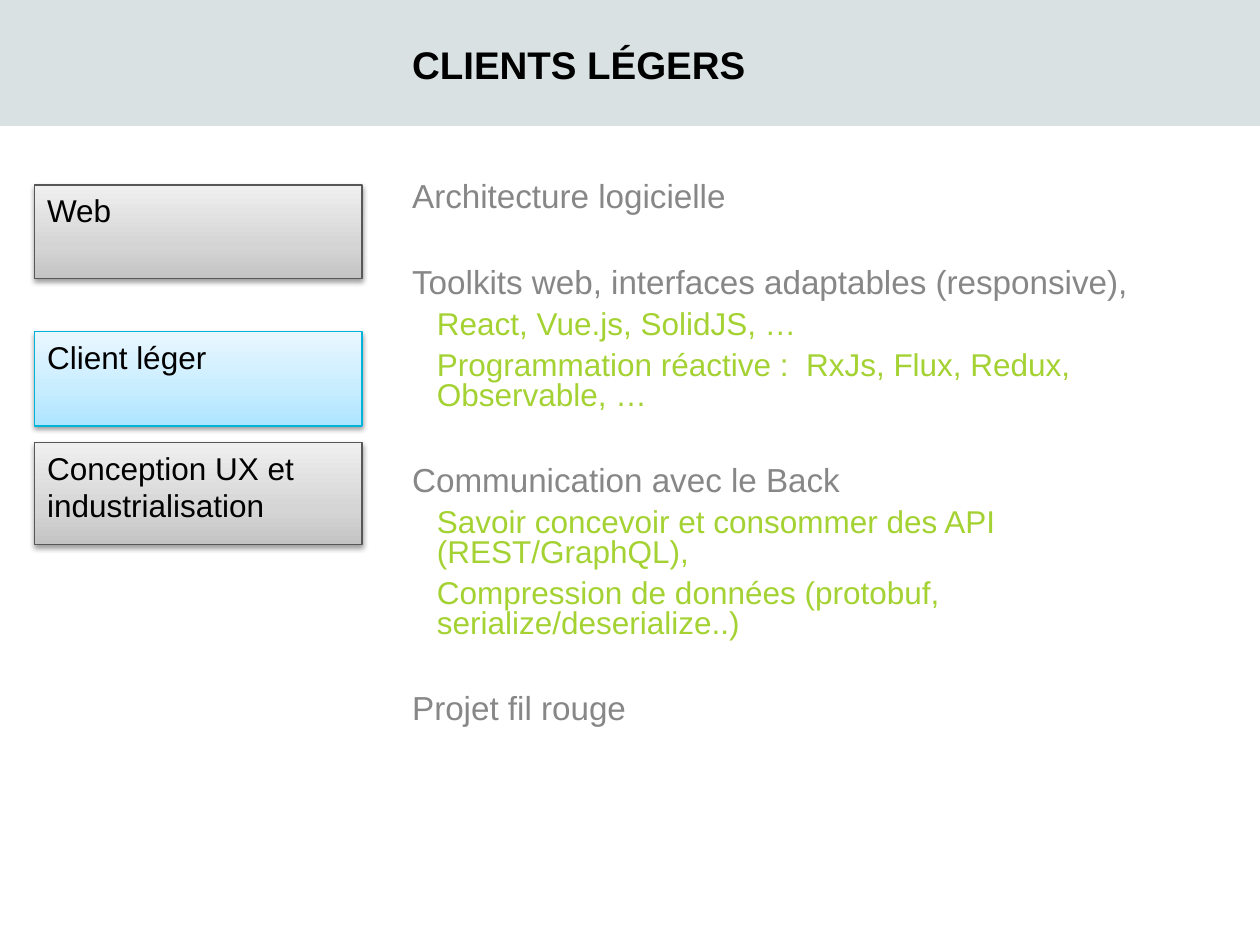
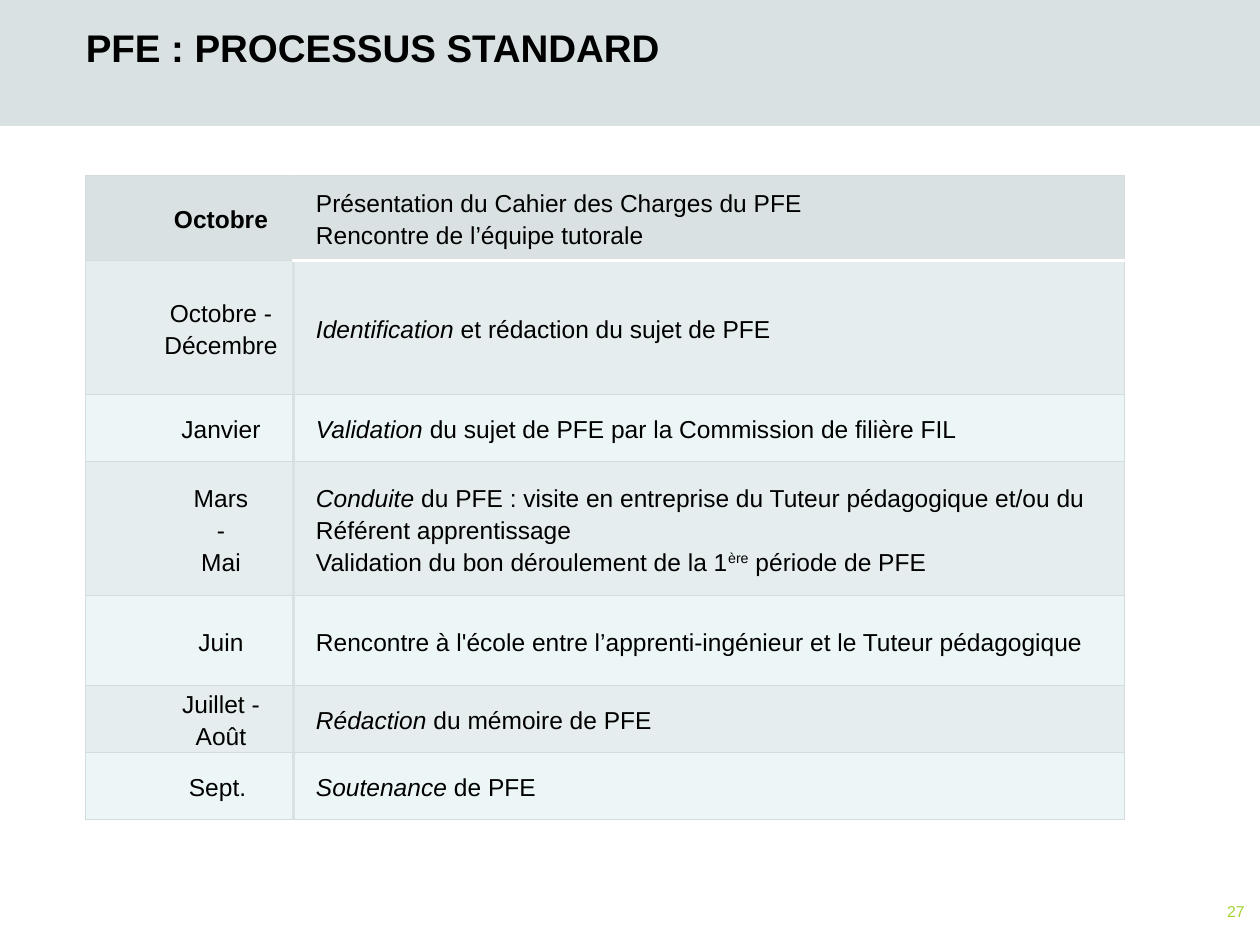
from copy import deepcopy

from lxml.etree import SubElement as Sub
from pptx import Presentation
from pptx.dml.color import RGBColor as Rgb
from pptx.enum.shapes import MSO_SHAPE as Kind
from pptx.enum.text import MSO_ANCHOR as Anchor, MSO_AUTO_SIZE as Auto, PP_ALIGN as Align
from pptx.oxml.ns import qn
from pptx.util import Cm, Pt

HUES = {
    "black": "000000", "white": "FFFFFF", "band": "D9E1E2",
    "gray": "878787", "lime": "A4D233", "rule": "D4DCDD",
    "odd": "E5EDEE", "even": "EDF6F7",
}
GRAY = {"stops": ("C4C4C4", "D5D5D5", "EFEFEF"), "edge": "575757"}
BLUE = {"stops": ("ADE5FF", "C5ECFF", "E9F7FF"), "edge": "00B4D9"}
FONT = "Arial"


def hue(name):
    return Rgb.from_string(HUES.get(name, name))


def put(para, text, size=18, color="black", bold=False, align=Align.LEFT,
        line=1.0, before=0, after=0, indent=0, level=0):
    props = para._p.get_or_add_pPr()
    props.set("marL", str(Cm(indent)))
    props.set("indent", "0")
    para.level = level
    para.alignment = align
    para.line_spacing = line
    para.space_before = Pt(before)
    para.space_after = Pt(after)
    for i, part in enumerate(text.split("*")):
        for j, piece in enumerate(part.split("^")):
            if not piece:
                continue
            run = para.add_run()
            run.text = piece
            font = run.font
            font.name, font.size = FONT, Pt(size)
            font.bold, font.italic = bold, i % 2 == 1
            font.color.rgb = hue(color)
            if j % 2:
                run._r.get_or_add_rPr().set("baseline", "30000")


def fill_text(frame, lines, **style):
    for i, text in enumerate(lines):
        put(frame.add_paragraph() if i else frame.paragraphs[0], text, **style)


def trim(frame, anchor):
    frame.word_wrap = True
    frame.auto_size = Auto.NONE
    frame.vertical_anchor = anchor
    frame.margin_left = frame.margin_right = 0
    frame.margin_top = frame.margin_bottom = 0


class Deck:
    def __init__(self):
        self.show = Presentation()
        self.show.slide_width, self.show.slide_height = Cm(25.4), Cm(19.05)
        self.slide = None

    def start(self, text, left, top):
        self.slide = self.show.slides.add_slide(self.show.slide_layouts[5])
        self.band()
        title = self.slide.shapes.title
        title.left, title.top = Cm(left), Cm(top)
        title.width, title.height = Cm(19.48), Cm(1.42)
        trim(title.text_frame, Anchor.BOTTOM)
        fill_text(title.text_frame, [text], size=22, bold=True)

    def rect(self, left, top, width, height):
        shape = self.slide.shapes.add_shape(
            Kind.RECTANGLE, Cm(left), Cm(top), Cm(width), Cm(height))
        shape.shadow.inherit = False
        return shape

    def band(self):
        shape = self.rect(0, 0, 25.4, 2.54)
        shape.fill.solid()
        shape.fill.fore_color.rgb = hue("band")
        shape.line.fill.background()
        self.slide.shapes._spTree.insert(2, shape._element)

    def card(self, text, top, height, stops, edge):
        shape = self.rect(0.7, top, 6.6, height)
        shape.fill.gradient()
        shape.fill.gradient_angle = 90
        props = shape._element.spPr
        marks = props.find(".//" + qn("a:gsLst"))
        marks.insert(1, deepcopy(marks[1]))
        for stop, spot, tint in zip(shape.fill.gradient_stops, (0, 0.35, 1), stops):
            stop.position = spot
            stop.color.rgb = hue(tint)
        shape.line.color.rgb = hue(edge)
        shape.line.width = Pt(0.75)
        shade = Sub(props.find(qn("a:effectLst")), qn("a:outerShdw"), blurRad="40000",
                    dist="20000", dir="5400000", rotWithShape="0")
        tint = Sub(shade, qn("a:srgbClr"), val=HUES["black"])
        Sub(tint, qn("a:alpha"), val="38000")
        shape.text_frame.word_wrap = True
        shape.text_frame.vertical_anchor = Anchor.TOP
        fill_text(shape.text_frame, [text])

    def box(self, left, top, width, height, anchor=Anchor.TOP):
        shape = self.slide.shapes.add_textbox(Cm(left), Cm(top), Cm(width), Cm(height))
        trim(shape.text_frame, anchor)
        return shape.text_frame

    def topics(self, groups):
        frame = self.box(8.31, 3.68, 16.41, 11.33)
        for i, (head, items) in enumerate(groups):
            para = frame.add_paragraph() if i else frame.paragraphs[0]
            put(para, head, size=19, color="gray", line=0.8,
                before=25 if i else 0, after=6)
            for item in items:
                put(frame.add_paragraph(), item, color="lime", line=0.8,
                    after=6, indent=0.5, level=1)

    def number(self, text):
        frame = self.box(23.29, 17.81, 1.8, 1.12, Anchor.MIDDLE)
        fill_text(frame, [text], size=9, color="lime", align=Align.RIGHT)

    def edges(self, cell, **sides):
        props = cell._tc.get_or_add_tcPr()
        for i, side in enumerate("LRTB"):
            tint, width = sides.get(side, ("rule", 0.75))
            line = Sub(props, qn("a:ln" + side), w=str(Pt(width)))
            Sub(Sub(line, qn("a:solidFill")), qn("a:srgbClr"), val=HUES[tint])
            props.insert(i, line)

    def plan(self, rows, widths, heights):
        grid = self.slide.shapes.add_table(
            len(rows), len(widths), Cm(1.73), Cm(3.53),
            Cm(sum(widths)), Cm(sum(heights))).table
        grid.horz_banding = False
        for col, width in zip(grid.columns, widths):
            col.width = Cm(width)
        looks = ({"align": Align.CENTER, "indent": 1.27}, {"indent": 0.33})
        for i, (row, height) in enumerate(zip(rows, heights)):
            grid.rows[i].height = Cm(height)
            for j, lines in enumerate(row):
                cell = grid.cell(i, j)
                cell.vertical_anchor = Anchor.MIDDLE
                cell.margin_left = cell.margin_right = Cm(0.13)
                cell.margin_top = cell.margin_bottom = 0
                fill_text(cell.text_frame, lines, size=14, line=1.15,
                          bold=i == j == 0, **looks[j])
                cell.fill.solid()
                cell.fill.fore_color.rgb = hue(
                    "band" if i == 0 else "odd" if i % 2 else "even")
                sides = {"L" if j else "R": ("band", 2)}
                if j and i < 2:
                    sides["T" if i else "B"] = ("white", 2)
                self.edges(cell, **sides)


def main():
    deck = Deck()

    deck.start("CLIENTS LÉGERS", 8.31, 0.33)
    deck.topics([
        ("Architecture logicielle", []),
        ("Toolkits web, interfaces adaptables (responsive),", [
            "React, Vue.js, SolidJS, …",
            "Programmation réactive :  RxJs, Flux, Redux, Observable, …"]),
        ("Communication avec le Back", [
            "Savoir concevoir et consommer des API (REST/GraphQL),",
            "Compression de données (protobuf, serialize/deserialize..)"]),
        ("Projet fil rouge", []),
    ])
    deck.card("Conception UX et industrialisation", 8.92, 2.06, **GRAY)
    deck.card("Client léger", 6.69, 1.9, **BLUE)
    deck.card("Web", 3.73, 1.88, **GRAY)

    deck.start("PFE : PROCESSUS STANDARD", 1.73, 0)
    deck.plan([
        (["Octobre"], ["Présentation du Cahier des Charges du PFE",
                       "Rencontre de l’équipe tutorale"]),
        (["Octobre - Décembre"], ["*Identification* et rédaction du sujet de PFE"]),
        (["Janvier"], ["*Validation* du sujet de PFE par la Commission de filière FIL"]),
        (["Mars", "-", "Mai"], [
            "*Conduite* du PFE : visite en entreprise du Tuteur pédagogique "
            "et/ou du Référent apprentissage",
            "Validation du bon déroulement de la 1^ère^ période de PFE"]),
        (["Juin"], ["Rencontre à l'école entre l’apprenti-ingénieur "
                    "et le Tuteur pédagogique"]),
        (["Juillet - Août"], ["*Rédaction* du mémoire de PFE"]),
        (["Sept. "], ["*Soutenance* de PFE"]),
    ], (4.18, 16.75), (1.73, 2.7, 1.35, 2.7, 1.81, 1.35, 1.35))
    deck.number("27")

    deck.show.save("out.pptx")


if __name__ == "__main__":
    main()
